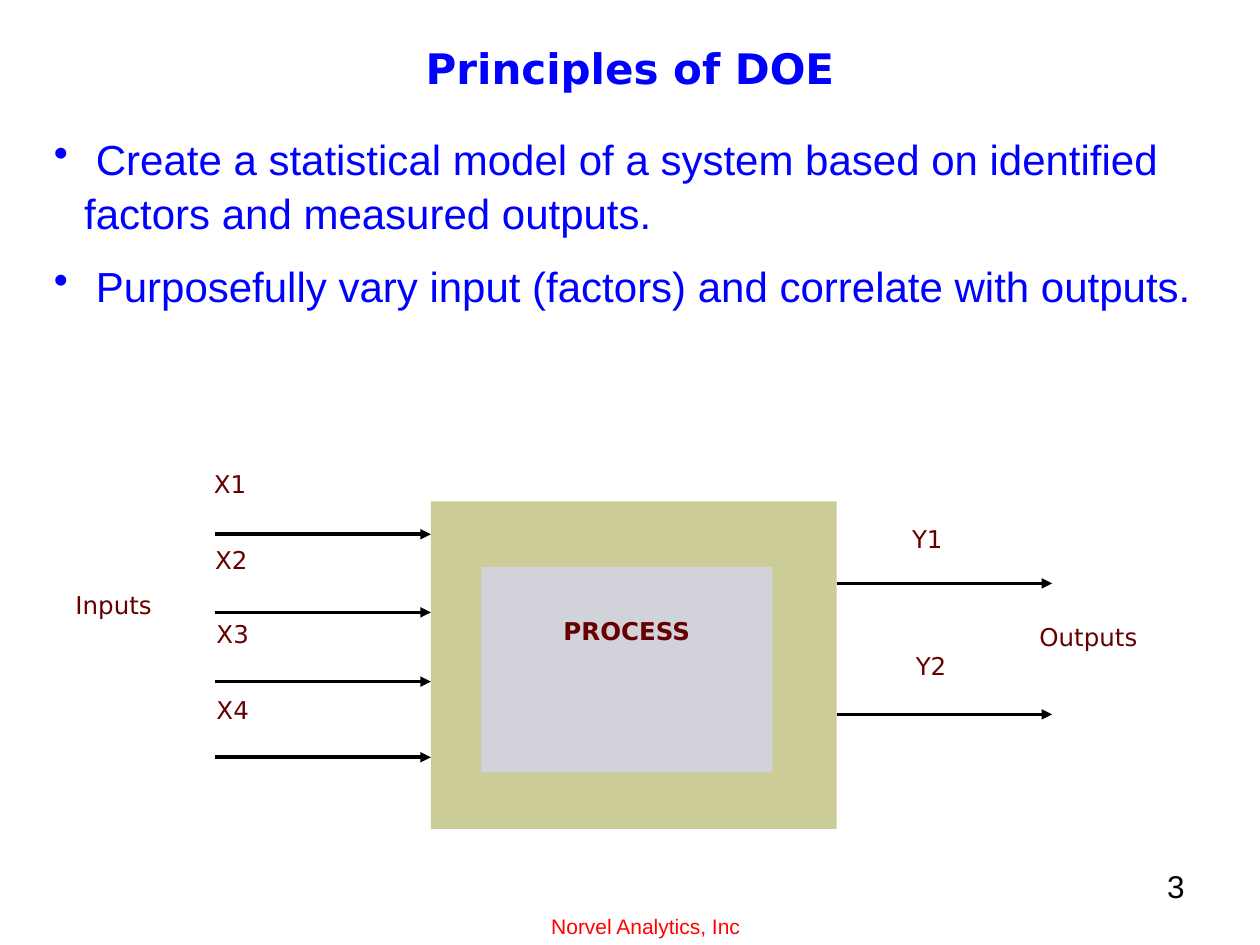
from lxml import etree
from pptx import Presentation
from pptx.enum import shapes, text
from pptx.oxml import ns
from pptx.util import Inches, Pt
from pptx.dml.color import RGBColor

COLORS = {"blue": "0000FF", "red": "FF0000", "black": "000000", "maroon": "660000",
          "khaki": "CCCC99", "gray": "D1D2DA"}
LABEL_FONT, BODY_FONT = "DejaVu Sans", "Arial"

TITLE = "Principles of DOE"
PRINCIPLES = [
    " Create a statistical model of a system based on identified factors and measured outputs.",
    " Purposefully vary input (factors) and correlate with outputs.",
]
FOOTER, PAGE = "Norvel Analytics, Inc", "3"
LABELS = [
    ("X1", 1.6, 3.67, 0.56), ("X2", 1.61, 4.28, 0.56),
    ("X3", 1.62, 4.86, 0.56), ("X4", 1.62, 5.47, 0.56),
    ("Inputs", 0.5, 4.63, 1.01), ("Outputs", 8.15, 4.89, 1.19),
    ("Y1", 7.14, 4.11, 0.56), ("Y2", 7.17, 5.12, 0.54),
]
SYSTEM = (3.42, 3.98, 3.22, 2.6)
PROCESS = (3.82, 4.5, 2.31, 1.63)
ARROW_LENGTH = 1.71
INPUT_LEVELS = [4.24, 4.86, 5.41, 6.01]
OUTPUT_LEVELS = [4.63, 5.67]


def color(name):
    return RGBColor.from_string(COLORS[name])


def place(shape, box):
    shape.left, shape.top, shape.width, shape.height = map(Inches, box)


def write(shape, lines, size, font, ink, align=text.PP_ALIGN.LEFT, bold=False,
          anchor=text.MSO_ANCHOR.TOP):
    frame = shape.text_frame
    frame.text = "\n".join(lines)
    frame.word_wrap = True
    frame.vertical_anchor = anchor
    for paragraph in frame.paragraphs:
        paragraph.alignment = align
        paragraph.font.size = Pt(size)
        paragraph.font.name = font
        paragraph.font.bold = bold
        paragraph.font.color.rgb = color(ink)
    return frame


def add_text(slide, box, *args, **style):
    return write(slide.shapes.add_textbox(*map(Inches, box)), *args, **style)


def add_bullets(frame):
    for index, paragraph in enumerate(frame.paragraphs):
        paragraph.line_spacing = 1.07
        paragraph.space_before = Pt(11 if index else 0)
        properties = paragraph._p.get_or_add_pPr()
        properties.set("marL", str(Inches(0.24)))
        properties.set("indent", str(-Inches(0.24)))
        bullet = etree.Element(ns.qn("a:buChar"), char="•")
        properties.find(ns.qn("a:defRPr")).addprevious(bullet)


def add_block(slide, box, fill):
    block = slide.shapes.add_shape(shapes.MSO_SHAPE.RECTANGLE, *map(Inches, box))
    block.shadow.inherit = False
    block.fill.solid()
    block.fill.fore_color.rgb = color(fill)
    block.line.fill.background()
    return block


def add_arrow(slide, left, level):
    arrow = slide.shapes.add_connector(
        shapes.MSO_CONNECTOR.STRAIGHT,
        *map(Inches, (left, level, left + ARROW_LENGTH, level)))
    arrow.line.color.rgb = color("black")
    arrow.line.width = Pt(2)
    etree.SubElement(arrow.line._get_or_add_ln(), ns.qn("a:tailEnd"), type="triangle")
    etree.SubElement(arrow._element.spPr, ns.qn("a:effectLst"))


def main():
    """Build the design-of-experiments slide."""
    deck = Presentation()
    deck.slide_width, deck.slide_height = Inches(10), Inches(7.5)
    slide = deck.slides.add_slide(deck.slide_layouts[5])
    center = text.PP_ALIGN.CENTER

    place(slide.shapes.title, (0.75, 0, 8.5, 1.08))
    write(slide.shapes.title, [TITLE], 24, LABEL_FONT, "blue", center, True,
          text.MSO_ANCHOR.MIDDLE)
    add_bullets(add_text(slide, (0.33, 0.98, 9.33, 1.51), PRINCIPLES, 24, BODY_FONT, "blue"))
    add_text(slide, (1.5, 7.2, 7.25, 0.3), [FOOTER], 12, BODY_FONT, "red", center)
    add_text(slide, (7.17, 6.83, 2.33, 0.52), [PAGE], 18, BODY_FONT, "black",
             text.PP_ALIGN.RIGHT)

    add_block(slide, SYSTEM, "khaki")
    process = write(add_block(slide, PROCESS, "gray"), ["PROCESS"], 14, LABEL_FONT,
                    "maroon", center, True)
    process.margin_top = Inches(0.39)

    system_left, _, system_width, _ = SYSTEM
    for level in INPUT_LEVELS:
        add_arrow(slide, system_left - ARROW_LENGTH, level)
    for level in OUTPUT_LEVELS:
        add_arrow(slide, system_left + system_width, level)
    for label, left, top, width in LABELS:
        add_text(slide, (left, top, width, 0.52), [label], 14, LABEL_FONT, "maroon")

    deck.save("out.pptx")


if __name__ == "__main__":
    main()
